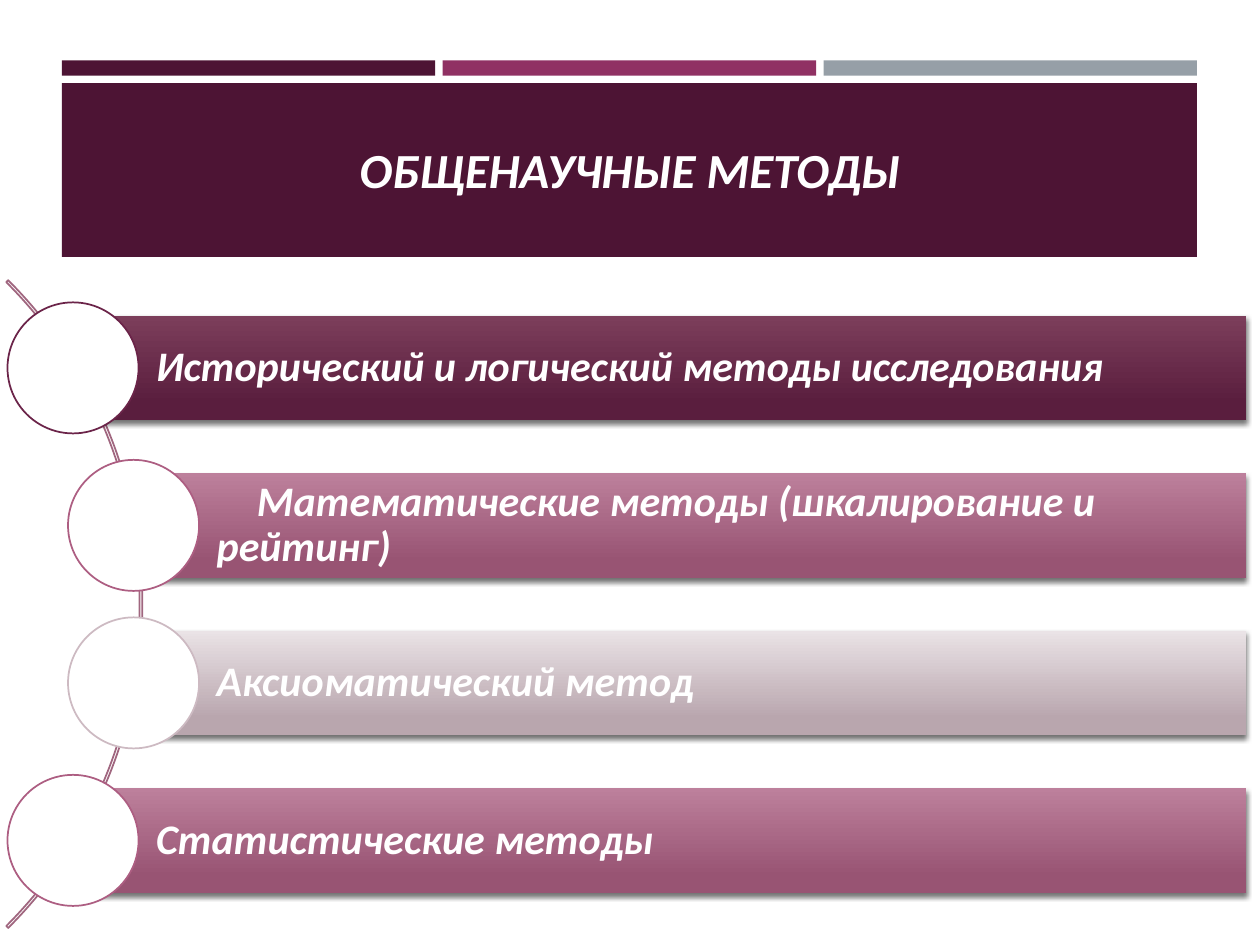
from lxml import etree
from pptx import Presentation, util as u
from pptx.dml.color import RGBColor
from pptx.enum import shapes, text
from pptx.oxml import ns

# Content
TITLE = "ОБЩЕНАУЧНЫЕ МЕТОДЫ"
METHODS = [  # wording, palette, column, first-line indent
    ("Исторический и логический методы исследования", "plum", 0, 0),
    ("Математические методы (шкалирование и рейтинг)", "rose", 1, 0.32),
    ("Аксиоматический метод", "mist", 1, 0),
    ("Статистические методы", "rose", 0, 0),
]
COLORS = {"dark": "4D1434", "berry": "903163", "gray": "969FA7",
          "white": "FFFFFF", "arc": "A0667F", "shadow": "000000"}
PALETTES = {  # gradient top, gradient bottom, circle outline
    "plum": ("7C3E5B", "5A1E3E", "6B2449"),
    "rose": ("BD809C", "985473", "AD5E82"),
    "mist": ("EAE3E6", "B9A6AE", "CDBAC2"),
}
FONT = "Calibri"

# Layout, in inches
WIDTH, HEIGHT = 10, 7.5
MARGIN, STRIP_GAP = 0.49, 0.06
HEADER_WIDTH = 9.01
STRIP_WIDTH = (HEADER_WIDTH - 2 * STRIP_GAP) / 3
ROW_TOP, ROW_STEP = 2.92, 1.25  # centre of the first row, row pitch
BAR_HEIGHT, BAR_RIGHT = 0.83, 9.89
COLUMNS = (0.58, 1.06)  # circle centres, where the bars start
CIRCLE = 1.04
ARC_LEFT, ARC_TOP, ARC_SIZE = -6.14, 1.16, 7.27
ARC_SHAPE = (189, 27, 0.003)  # start, end, band thickness

deck = Presentation()
deck.slide_width, deck.slide_height = u.Inches(WIDTH), u.Inches(HEIGHT)
page = deck.slides.add_slide(deck.slide_layouts[6])


def rgb(value):
    return RGBColor.from_string(value)


def outline(shape, color):
    shape.line.color.rgb = rgb(color)
    shape.line.width = u.Pt(1)


def add_shape(kind, left, top, width, height, fill=None):
    shape = page.shapes.add_shape(kind, *map(u.Inches, (left, top, width, height)))
    shape.shadow.inherit = False
    shape.line.fill.background()
    if fill:
        shape.fill.solid()
        shape.fill.fore_color.rgb = rgb(fill)
    return shape


def write(shape, wording, size, align, anchor):
    frame = shape.text_frame
    frame.word_wrap = True
    frame.vertical_anchor = anchor
    frame.text = wording
    para = frame.paragraphs[0]
    para.alignment = align
    font = para.runs[0].font
    font.name, font.size = FONT, u.Pt(size)
    font.bold = font.italic = True
    font.color.rgb = rgb(COLORS["white"])
    return para


def add_shadow(shape):
    effects = shape._element.spPr.find(ns.qn("a:effectLst"))
    shadow = etree.SubElement(effects, ns.qn("a:outerShdw"), blurRad=str(u.Pt(3)),
                              dist=str(u.Pt(2)), dir="5400000", rotWithShape="0")
    color = etree.SubElement(shadow, ns.qn("a:srgbClr"), val=COLORS["shadow"])
    etree.SubElement(color, ns.qn("a:alpha"), val="55000")


def add_bar(left, middle, wording, top_color, bottom_color, indent):
    bar = add_shape(shapes.MSO_SHAPE.RECTANGLE, left, middle - BAR_HEIGHT / 2,
                    BAR_RIGHT - left, BAR_HEIGHT)
    bar.fill.gradient()
    bar.fill.gradient_angle = 270
    for stop, color, position in zip(bar.fill.gradient_stops,
                                     (top_color, bottom_color), (0, 0.84)):
        stop.color.rgb, stop.position = rgb(color), position
    add_shadow(bar)
    para = write(bar, wording, 24, text.PP_ALIGN.LEFT, text.MSO_ANCHOR.MIDDLE)
    para.line_spacing = 0.9
    para._p.get_or_add_pPr().set("indent", str(u.Inches(indent)))
    frame = bar.text_frame
    frame.margin_left = u.Inches(0.66)
    frame.margin_top = frame.margin_right = frame.margin_bottom = u.Inches(0.06)


# Header: three strips, a panel and the title
for i, name in enumerate(("dark", "berry", "gray")):
    add_shape(shapes.MSO_SHAPE.RECTANGLE, MARGIN + i * (STRIP_WIDTH + STRIP_GAP),
              0.48, STRIP_WIDTH, 0.12, COLORS[name])
add_shape(shapes.MSO_SHAPE.RECTANGLE, MARGIN, 0.66, HEADER_WIDTH, 1.38, COLORS["dark"])
title = page.shapes.add_textbox(*map(u.Inches, (0.63, 0.44, 8.74, 1.18)))
write(title, TITLE, 28, text.PP_ALIGN.CENTER, text.MSO_ANCHOR.BOTTOM)

# Thin arc band behind the rows
arc = add_shape(shapes.MSO_SHAPE.BLOCK_ARC, ARC_LEFT, ARC_TOP, ARC_SIZE, ARC_SIZE)
for i, value in enumerate(ARC_SHAPE):
    arc.adjustments[i] = value
arc.fill.background()
outline(arc, COLORS["arc"])

# Rows: a bar with its circle
for row, (wording, palette, column, indent) in enumerate(METHODS):
    top_color, bottom_color, ring = PALETTES[palette]
    left, middle = COLUMNS[column], ROW_TOP + row * ROW_STEP
    add_bar(left, middle, wording, top_color, bottom_color, indent)
    circle = add_shape(shapes.MSO_SHAPE.OVAL, left - CIRCLE / 2, middle - CIRCLE / 2,
                       CIRCLE, CIRCLE, COLORS["white"])
    outline(circle, ring)

deck.save("out.pptx")
